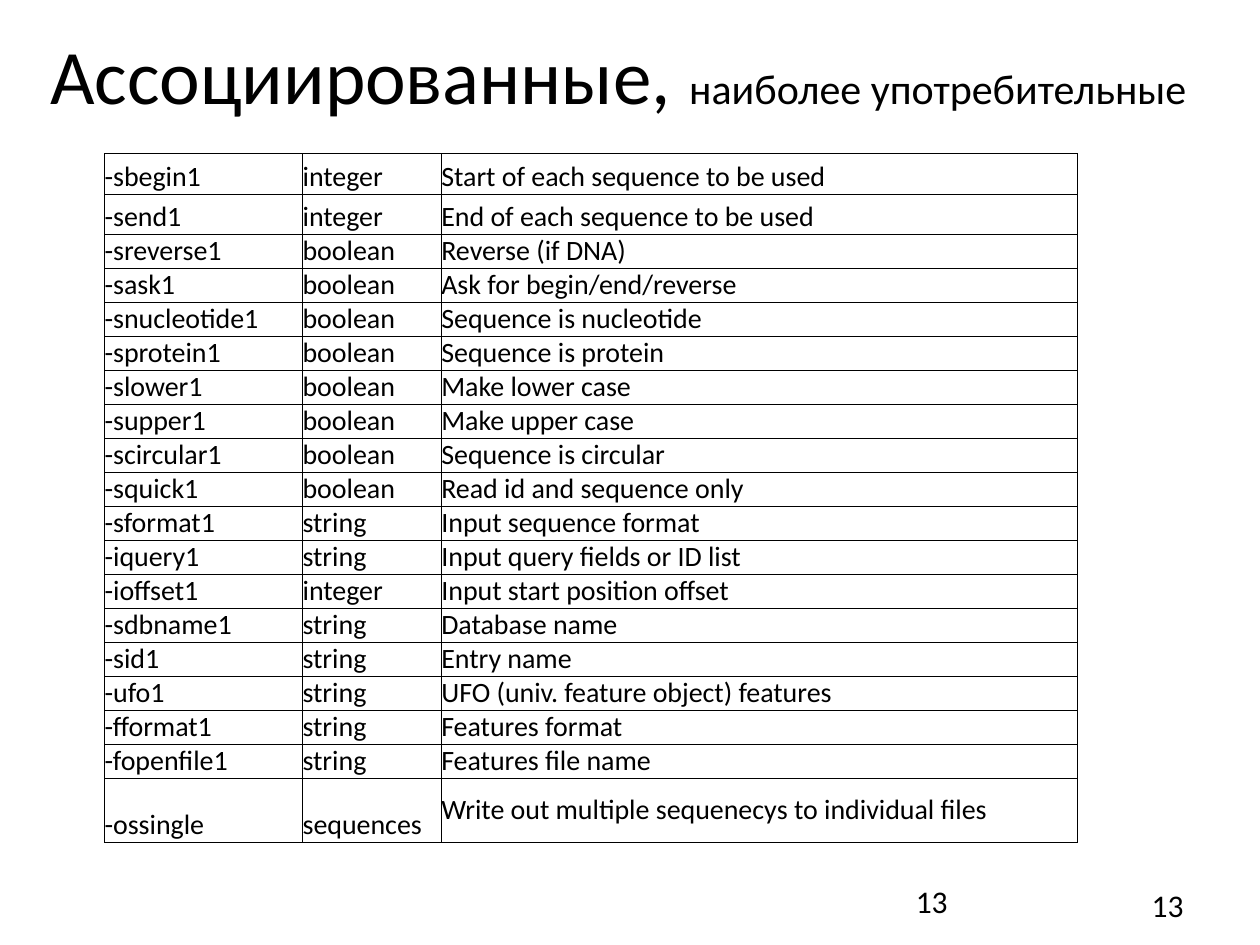
import pptx
import pptx.dml.color
import pptx.enum.text
import pptx.oxml
import pptx.oxml.ns
import pptx.util

BLACK = pptx.dml.color.RGBColor(0, 0, 0)
FONT = "Calibri"
ANCHOR = pptx.enum.text.MSO_ANCHOR
WIDTH, HEIGHT = pptx.util.Inches(10), pptx.util.Inches(7.5)

COLUMN_WEIGHTS = (1.57, 1.1, 5.04)
TALL_ROW, ROW, LAST_ROW = 0.32, 0.27, 0.51

QUALIFIERS = [
    ("-sbegin1", "integer", "Start of each sequence to be used"),
    ("-send1", "integer", "End of each sequence to be used"),
    ("-sreverse1", "boolean", "Reverse (if DNA)"),
    ("-sask1", "boolean", "Ask for begin/end/reverse"),
    ("-snucleotide1", "boolean", "Sequence is nucleotide"),
    ("-sprotein1", "boolean", "Sequence is protein"),
    ("-slower1", "boolean", "Make lower case"),
    ("-supper1", "boolean", "Make upper case"),
    ("-scircular1", "boolean", "Sequence is circular"),
    ("-squick1", "boolean", "Read id and sequence only"),
    ("-sformat1", "string", "Input sequence format"),
    ("-iquery1", "string", "Input query fields or ID list"),
    ("-ioffset1", "integer", "Input start position offset"),
    ("-sdbname1", "string", "Database name"),
    ("-sid1", "string", "Entry name"),
    ("-ufo1", "string", "UFO (univ. feature object) features"),
    ("-fformat1", "string", "Features format"),
    ("-fopenfile1", "string", "Features file name"),
    ("-ossingle", "sequences", "Write out multiple sequenecуs to individual files"),
]


def share_box(left, top, width, height):
    """Turn percentages of the slide into a box in EMU."""
    return (int(WIDTH * left / 100), int(HEIGHT * top / 100),
            int(WIDTH * width / 100), int(HEIGHT * height / 100))


def style_run(run, size):
    run.font.name = FONT
    run.font.size = pptx.util.Pt(size)
    run.font.color.rgb = BLACK


def add_title(slide, box, phrases):
    """Write one centred line from (text, size) phrases."""
    frame = slide.shapes.add_textbox(*box).text_frame
    frame.word_wrap = True
    line = frame.paragraphs[0]
    line.alignment = pptx.enum.text.PP_ALIGN.CENTER
    for phrase, size in phrases:
        run = line.add_run()
        run.text = phrase
        style_run(run, size)


def add_page_number(slide, box, number, indent):
    frame = slide.shapes.add_textbox(*box).text_frame
    frame.word_wrap = True
    frame.vertical_anchor = ANCHOR.MIDDLE
    frame.margin_left = pptx.util.Inches(indent)
    frame.text = number
    style_run(frame.paragraphs[0].runs[0], 18)


def add_borders(cell):
    properties = cell._tc.get_or_add_tcPr()
    for position, side in enumerate(("lnL", "lnR", "lnT", "lnB")):
        properties.insert(position, pptx.oxml.parse_xml(
            f'<a:{side} {pptx.oxml.ns.nsdecls("a")} w="{pptx.util.Pt(0.5)}">'
            f'<a:solidFill><a:srgbClr val="{BLACK}"/></a:solidFill></a:{side}>'))


def fill_cell(cell, text):
    cell.text_frame.text = text
    cell.margin_left = cell.margin_right = cell.margin_top = cell.margin_bottom = 0
    cell.vertical_anchor = ANCHOR.BOTTOM
    cell.fill.background()
    add_borders(cell)
    style_run(cell.text_frame.paragraphs[0].runs[0], 16)


def add_qualifier_table(slide, box):
    table = slide.shapes.add_table(len(QUALIFIERS), len(COLUMN_WEIGHTS), *box).table
    table.first_row = table.horz_banding = False
    for column, weight in zip(table.columns, COLUMN_WEIGHTS):
        column.width = int(box[2] * weight / sum(COLUMN_WEIGHTS))
    row_weights = [TALL_ROW] * 2 + [ROW] * (len(QUALIFIERS) - 3) + [LAST_ROW]
    for row, weight, texts in zip(table.rows, row_weights, QUALIFIERS):
        row.height = int(box[3] * weight / sum(row_weights))
        for cell, text in zip(row.cells, texts):
            fill_cell(cell, text)
    table.cell(len(QUALIFIERS) - 1, 2).vertical_anchor = ANCHOR.MIDDLE


def main():
    deck = pptx.Presentation()
    deck.slide_width, deck.slide_height = WIDTH, HEIGHT
    slide = deck.slides.add_slide(deck.slide_layouts[6])
    add_page_number(slide, share_box(71.7, 92.67, 23.3, 5.33), "13", 0.1)
    add_title(slide, share_box(0, 2.27, 98.2, 10.93),
              [("Ассоциированные, ", 44), ("наиболее употребительные", 24)])
    add_page_number(slide, share_box(71.7, 93.07, 23.3, 5.33), "13", 1.97)
    add_qualifier_table(slide, share_box(8.3, 16.27, 77.2, 72.93))
    deck.save("out.pptx")


if __name__ == "__main__":
    main()
